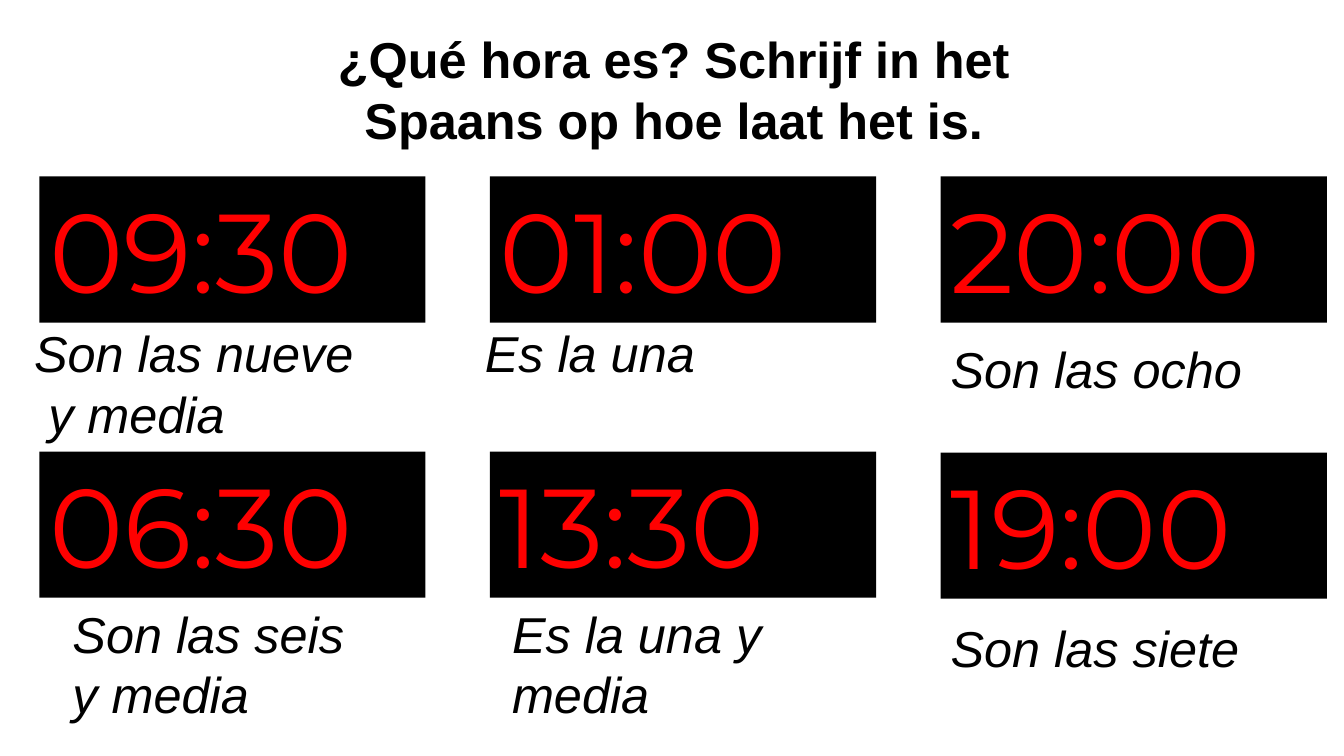
from pptx import Presentation
from pptx.dml.color import RGBColor
from pptx.enum.shapes import MSO_SHAPE
from pptx.enum.text import MSO_ANCHOR, MSO_AUTO_SIZE, PP_ALIGN
from pptx.util import Inches, Pt

BLACK = RGBColor(0, 0, 0)
RED = RGBColor(255, 0, 0)
RECTANGLE = MSO_SHAPE.RECTANGLE
TOP = MSO_ANCHOR.TOP
GROW = MSO_AUTO_SIZE.SHAPE_TO_FIT_TEXT
LEFT, CENTER = PP_ALIGN.LEFT, PP_ALIGN.CENTER

TITLE = "¿Qué hora es? Schrijf in het Spaans op hoe laat het is."
TITLE_FONT = {"name": "Arial", "size": Pt(36), "bold": True}
CLOCK_FONT = {"name": "Montserrat", "size": Pt(80)}
ANSWER_FONT = {"name": "Arial", "size": Pt(36), "italic": True}

CLOCK_LEFTS = (0.39, 4.86, 9.33)
CLOCK_WIDTH, CLOCK_HEIGHT = 3.83, 1.45
ANSWER_WIDTH, LINE_HEIGHT = 4.12, 0.6
HANGING_SPACE = 0.14

CLOCK_ROWS = [
    [
        ("09:30", 1.75, ["Son las nueve", "y media"], 0.24, 3.15, 2),
        ("01:00", 1.75, ["Es la una"], 4.71, 3.15, 1),
        ("20:00", 1.75, ["Son las ocho"], 9.33, 3.3, 1),
    ],
    [
        ("06:30", 4.48, ["Son las seis", "y media"], 0.62, 5.93, 2),
        ("13:30", 4.48, ["Es la una y media"], 4.98, 5.93, 2),
        ("19:00", 4.49, ["Son las siete"], 9.33, 6.07, 1),
    ],
]


def write(frame, lines, font, color, align=LEFT, side_margin=0.1):
    frame.text = "\n".join(lines)
    layout = {
        "word_wrap": True,
        "auto_size": GROW,
        "vertical_anchor": TOP,
        "margin_left": Inches(side_margin),
        "margin_right": Inches(side_margin),
        "margin_top": Inches(0.05),
        "margin_bottom": Inches(0.05),
    }
    for key, value in layout.items():
        setattr(frame, key, value)
    for paragraph in frame.paragraphs:
        paragraph.alignment = align
        paragraph.line_spacing = 1.0
        for run in paragraph.runs:
            for key, value in font.items():
                setattr(run.font, key, value)
            run.font.color.rgb = color


def add_title(slide):
    title = slide.shapes.title
    title.left, title.top = Inches(2.3), Inches(0.23)
    title.width, title.height = Inches(8.77), Inches(1.31)
    write(title.text_frame, [TITLE], TITLE_FONT, BLACK, CENTER, 0.2)


def add_clock(slide, time, left, top):
    clock = slide.shapes.add_shape(
        RECTANGLE, Inches(left), Inches(top),
        Inches(CLOCK_WIDTH), Inches(CLOCK_HEIGHT))
    clock.shadow.inherit = False
    clock.fill.solid()
    clock.fill.fore_color.rgb = BLACK
    clock.line.fill.background()
    write(clock.text_frame, [time], CLOCK_FONT, RED)


def add_answer(slide, lines, left, top, rows):
    answer = slide.shapes.add_textbox(
        Inches(left), Inches(top),
        Inches(ANSWER_WIDTH), Inches(rows * LINE_HEIGHT + 0.11))
    write(answer.text_frame, lines, ANSWER_FONT, BLACK)
    return answer


def main():
    deck = Presentation()
    deck.slide_width, deck.slide_height = Inches(13.33), Inches(7.5)
    slide = deck.slides.add_slide(deck.slide_layouts[5])
    add_title(slide)
    answers = []
    for clocks in CLOCK_ROWS:
        for clock_left, clock in zip(CLOCK_LEFTS, clocks):
            time, clock_top, lines, left, top, rows = clock
            add_clock(slide, time, clock_left, clock_top)
            answers.append(add_answer(slide, lines, left, top, rows))
    half_past_nine = answers[0].text_frame.paragraphs[1]
    half_past_nine._p.get_or_add_pPr().set("marL", str(Inches(HANGING_SPACE)))
    deck.save("out.pptx")


if __name__ == "__main__":
    main()
